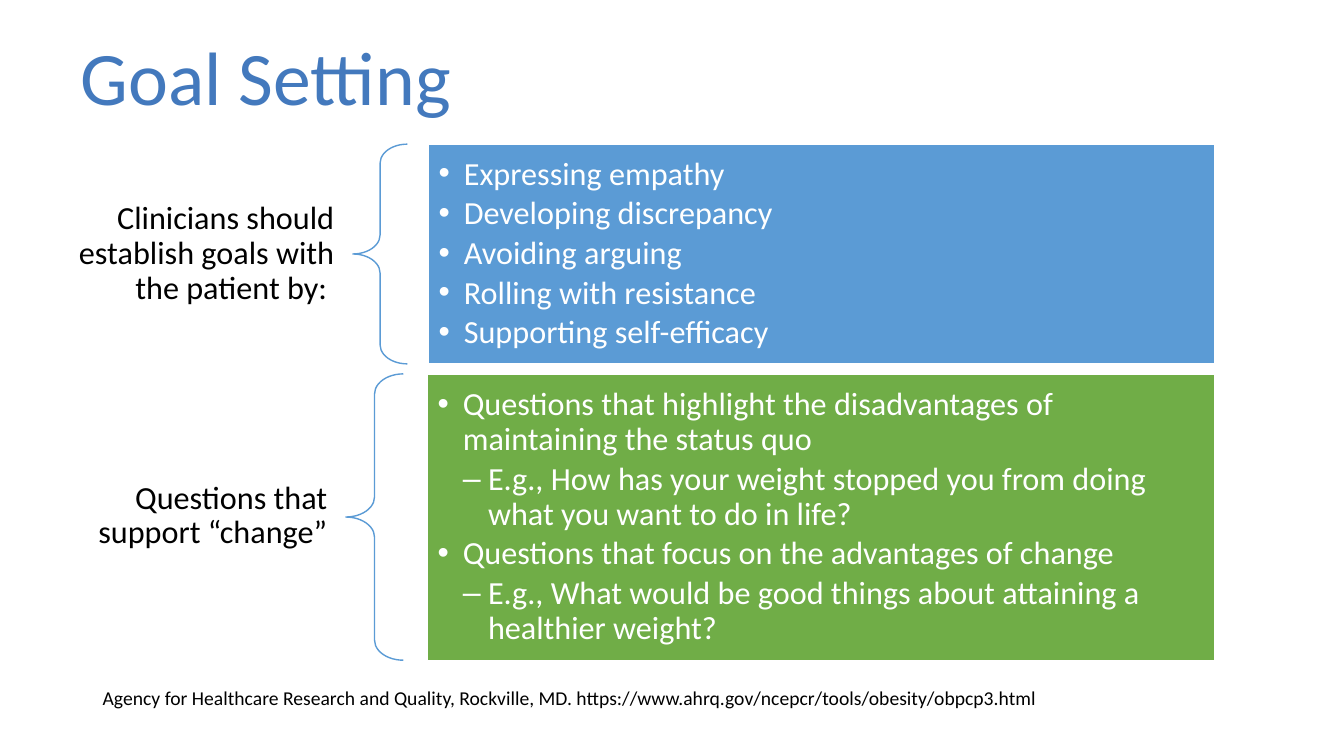
import pptx
import pptx.util
import pptx.dml.color
import pptx.enum.shapes
import pptx.enum.text
import pptx.oxml
import pptx.oxml.ns

Inches, Pt = pptx.util.Inches, pptx.util.Pt
RGBColor = pptx.dml.color.RGBColor
ALIGN = pptx.enum.text.PP_ALIGN
ANCHOR = pptx.enum.text.MSO_ANCHOR
AUTO_SIZE = pptx.enum.text.MSO_AUTO_SIZE

TITLE_BLUE = RGBColor(0x43, 0x79, 0xBD)
BLUE = RGBColor(0x5B, 0x9B, 0xD5)
GREEN = RGBColor(0x70, 0xAD, 0x47)
BLACK = RGBColor(0, 0, 0)
WHITE = RGBColor(0xFF, 0xFF, 0xFF)

FONT = "Calibri"
BODY_SIZE = 23
INDENT = 0.25
BULLETS = ("•", "‒")

# Each row: topic box, brace box, panel box, panel colour, topic, (level, point) list
ROWS = [
    ((0.56, 1.93, 2.94, 1.18), (3.5, 1.43, 0.54, 2.18), (4.25, 1.43, 7.8, 2.18), BLUE,
     "Clinicians should establish goals with the patient by: ",
     [(0, "Expressing empathy"),
      (0, "Developing discrepancy"),
      (0, "Avoiding arguing"),
      (0, "Rolling with resistance"),
      (0, "Supporting self-efficacy")]),
    ((0.56, 4.7, 2.87, 0.84), (3.43, 3.71, 0.57, 2.84), (4.24, 3.71, 7.81, 2.84), GREEN,
     "Questions that support “change”",
     [(0, "Questions that highlight the disadvantages of maintaining the status quo"),
      (1, "E.g., How has your weight stopped you from doing what you want to do in life?"),
      (0, "Questions that focus on the advantages of change"),
      (1, "E.g., What would be good things about attaining a healthier weight?")]),
]


def place(shape, box):
    shape.left, shape.top, shape.width, shape.height = map(Inches, box)


def set_frame(frame, anchor, side=0.1, edge=0.05):
    frame.word_wrap = True
    frame.auto_size = AUTO_SIZE.NONE
    frame.vertical_anchor = anchor
    frame.margin_left = frame.margin_right = Inches(side)
    frame.margin_top = frame.margin_bottom = Inches(edge)


def write(paragraph, text, size, color, align=ALIGN.LEFT, spacing=0.9, after=0):
    paragraph.alignment = align
    paragraph.line_spacing = spacing
    paragraph.space_before = Pt(0)
    paragraph.space_after = Pt(after)
    run = paragraph.add_run()
    run.text = text
    run.font.name = FONT
    run.font.size = Pt(size)
    run.font.color.rgb = color


def set_bullet(paragraph, level):
    paragraph.level = level
    properties = paragraph._p.get_or_add_pPr()
    properties.set("marL", str(Inches(INDENT * (level + 1))))
    properties.set("indent", str(Inches(-INDENT)))
    bullet = pptx.oxml.parse_xml(
        f'<a:buChar {pptx.oxml.ns.nsdecls("a")} char="{BULLETS[level]}"/>')
    properties.append(bullet)


def fill_title(title):
    place(title, (0.7, 0.4, 11.5, 0.81))
    set_frame(title.text_frame, ANCHOR.MIDDLE)
    write(title.text_frame.paragraphs[0], "Goal Setting", 54, TITLE_BLUE)


def add_topic(slide, box, text):
    topic = slide.shapes.add_textbox(*map(Inches, box))
    set_frame(topic.text_frame, ANCHOR.MIDDLE, 0.18, 0.06)
    write(topic.text_frame.paragraphs[0], text, BODY_SIZE, BLACK, ALIGN.RIGHT)


def add_brace(slide, box):
    brace = slide.shapes.add_shape(
        pptx.enum.shapes.MSO_SHAPE.LEFT_BRACE, *map(Inches, box))
    brace.adjustments[0] = 0.35
    brace.adjustments[1] = 0.5
    brace.shadow.inherit = False
    brace.fill.background()
    brace.line.color.rgb = BLUE
    brace.line.width = Pt(1)


def fill_panel(panel, box, color, points):
    place(panel, box)
    panel.fill.solid()
    panel.fill.fore_color.rgb = color
    panel.line.color.rgb = WHITE
    panel.line.width = Pt(1)
    frame = panel.text_frame
    set_frame(frame, ANCHOR.MIDDLE, 0.1, 0.1)
    for index, (level, point) in enumerate(points):
        paragraph = frame.add_paragraph() if index else frame.paragraphs[0]
        set_bullet(paragraph, level)
        write(paragraph, point, BODY_SIZE, WHITE, after=3.5)


def add_citation(slide):
    citation = slide.shapes.add_textbox(*map(Inches, (0.92, 6.76, 10.5, 0.34)))
    set_frame(citation.text_frame, ANCHOR.TOP)
    write(citation.text_frame.paragraphs[0],
          "Agency for Healthcare Research and Quality, Rockville, MD. "
          "https://www.ahrq.gov/ncepcr/tools/obesity/obpcp3.html",
          14, BLACK, spacing=1.0)


def main():
    deck = pptx.Presentation()
    deck.slide_width, deck.slide_height = Inches(13.33), Inches(7.5)

    # Two Content layout: a title and one body placeholder per panel
    slide = deck.slides.add_slide(deck.slide_layouts[3])
    title, *panels = slide.placeholders
    fill_title(title)

    # Topic, brace and list panel of each row
    for panel, row in zip(panels, ROWS):
        topic_box, brace_box, panel_box, color, topic, points = row
        add_topic(slide, topic_box, topic)
        add_brace(slide, brace_box)
        fill_panel(panel, panel_box, color, points)

    add_citation(slide)
    deck.save("out.pptx")


if __name__ == "__main__":
    main()
